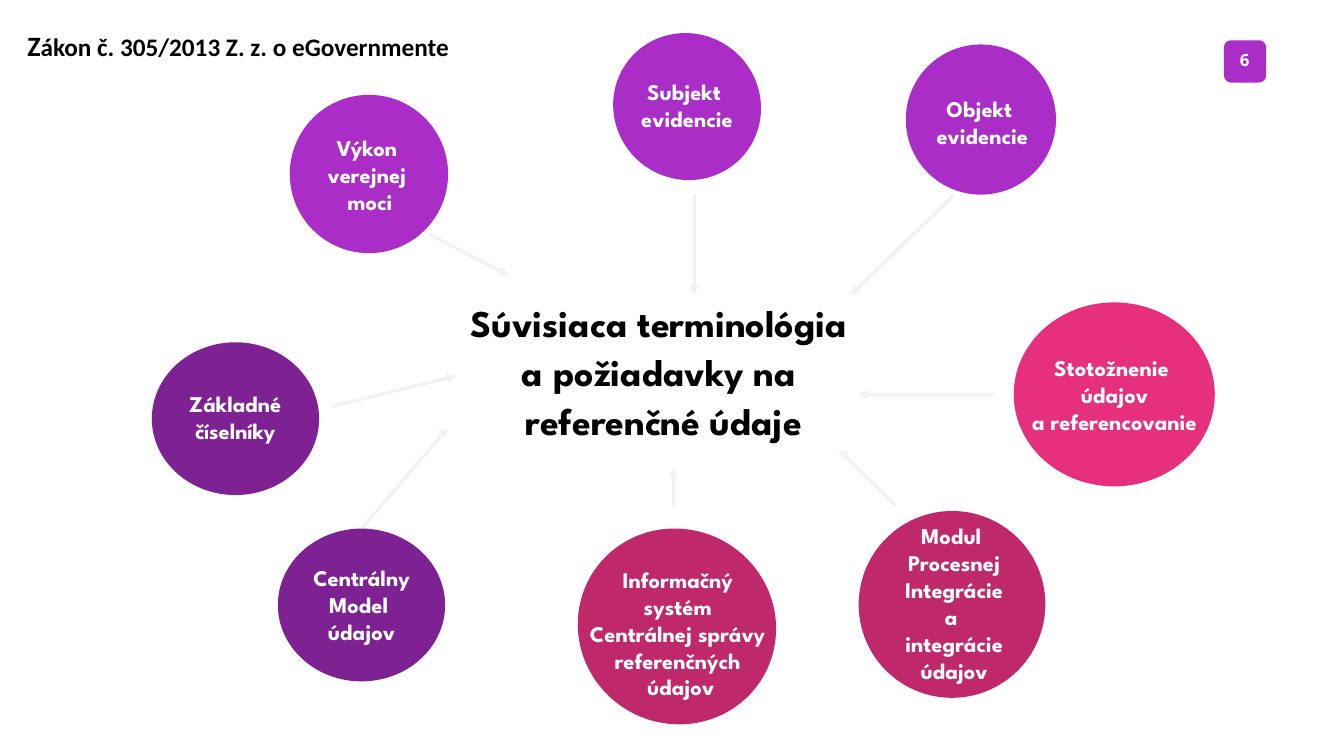
from pptx import Presentation
from pptx.dml.color import RGBColor
from pptx.enum.shapes import MSO_CONNECTOR, MSO_SHAPE
from pptx.enum.text import MSO_ANCHOR, MSO_AUTO_SIZE, PP_ALIGN
from pptx.oxml.ns import qn
from pptx.util import Cm, Pt
from lxml import etree

ELLIPSE, ROUNDED = MSO_SHAPE.OVAL, MSO_SHAPE.ROUNDED_RECTANGLE
STRAIGHT = MSO_CONNECTOR.STRAIGHT
TOP, MIDDLE = MSO_ANCHOR.TOP, MSO_ANCHOR.MIDDLE
LEFT, CENTER = PP_ALIGN.LEFT, PP_ALIGN.CENTER
NO_AUTOFIT = MSO_AUTO_SIZE.NONE

BLACK = RGBColor(0x00, 0x00, 0x00)
WHITE = RGBColor(0xFF, 0xFF, 0xFF)
PALE_GREY = RGBColor(0xF2, 0xF2, 0xF2)
VIOLET = RGBColor(0xAA, 0x2D, 0xC8)
PURPLE = RGBColor(0x7E, 0x21, 0x93)
PINK = RGBColor(0xE6, 0x2F, 0x7D)
CRIMSON = RGBColor(0xBF, 0x28, 0x6B)
DISPLAY_FONT = "League Spartan"

LAW_TITLE = [("Z", 40), ("ákon č. 305/2013 Z. z. o eGovernmente", 36)]
TOPIC = ["Súvisiaca terminológia ", "a požiadavky na ", "referenčné údaje"]
PAGE_NUMBER = ["6  "]

# lines, colour, circle (left, top, width, height), rotation, label (centre x, centre y, width)
TERMS = [
    (["Objekt ", "evidencie"], VIOLET, (45.64, 2.24, 7.57, 7.57), 0, (49.5, 6.15, 5.69)),
    (["Centrálny", "Model ", "údajov"], PURPLE, (14, 26.64, 8.43, 7.7), 0, (18.22, 30.45, 5.77)),
    (["Stotožnenie ", "údajov", "a referencovanie"], PINK,
     (51.08, 15.24, 10.13, 9.27), 0, (56.16, 19.89, 9.7)),
    (["Modul ", "Procesnej", "Integrácie", "a ", "integrácie", "údajov"], CRIMSON,
     (43.26, 25.76, 9.42, 9.4), 300.9, (48.08, 30.39, 5.94)),
    (["Subjekt ", "evidencie"], VIOLET, (30.86, 1.7, 7.52, 7.34), 218.6, (34.62, 5.28, 5.69)),
    (["Výkon ", "verejnej ", "moci"], VIOLET, (14.6, 4.78, 7.98, 7.98), 0, (18.64, 8.79, 5.13)),
    (["Informačný ", "systém ", "Centrálnej správy ", "referenčných ", "údajov"], CRIMSON,
     (29.21, 26.54, 9.8, 10.06), 300.9, (34.3, 31.91, 10.39)),
    (["Základné", "číselníky"], PURPLE, (7.65, 17.25, 8.43, 7.7), 0, (11.86, 21.01, 5.44)),
]

ARROWS = [
    (48.03, 9.86, 42.88, 14.86),
    (33.93, 25.48, 33.93, 23.57),
    (50.11, 19.89, 43.26, 19.89),
    (21.59, 11.79, 25.63, 13.87),
    (34.98, 9.8, 34.98, 14.86),
    (45.11, 25.48, 42.27, 22.66),
    (18.21, 26.64, 22.58, 21.56),
    (16.76, 20.47, 22.99, 18.95),
]


def add_filled(slide, preset, box, colour, rotation=0):
    shape = slide.shapes.add_shape(preset, *map(Cm, box))
    shape.shadow.inherit = False
    shape.fill.solid()
    shape.fill.fore_color.rgb = colour
    shape.line.fill.background()
    shape.rotation = rotation


def add_text(slide, box, lines, size, colour, font=DISPLAY_FONT, anchor=TOP, spacing=None):
    frame = slide.shapes.add_textbox(*map(Cm, box)).text_frame
    frame.word_wrap = False
    frame.vertical_anchor = anchor
    frame.text = "\n".join(lines)
    for paragraph in frame.paragraphs:
        paragraph.alignment = CENTER
        paragraph.line_spacing = spacing
        paragraph.font.name = font
        paragraph.font.size = Pt(size)
        paragraph.font.bold = True
        paragraph.font.color.rgb = colour


def add_arrow(slide, ends):
    arrow = slide.shapes.add_connector(STRAIGHT, *map(Cm, ends))
    arrow.line.color.rgb = PALE_GREY
    arrow.line.width = Pt(4.5)
    etree.SubElement(arrow.line._get_or_add_ln(), qn("a:tailEnd"), type="triangle")
    etree.SubElement(arrow._element.spPr, qn("a:effectLst"))


def add_term(slide, lines, colour, circle, rotation, label):
    add_filled(slide, ELLIPSE, circle, colour, rotation)
    x, y, width = label
    height = 0.25 + 1.37 * len(lines)
    box = (x - width / 2, y - height / 2, width, height)
    add_text(slide, box, lines, 32, WHITE, anchor=MIDDLE)


def set_title(title):
    title.left, title.top, title.width, title.height = map(Cm, (1.12, 1.32, 21.87, 3.5))
    frame = title.text_frame
    frame.auto_size = NO_AUTOFIT
    frame.vertical_anchor = TOP
    paragraph = frame.paragraphs[0]
    paragraph.alignment = LEFT
    paragraph.font.name = "Calibri"
    paragraph.font.bold = True
    paragraph.font.color.rgb = BLACK
    for text, size in LAW_TITLE:
        run = paragraph.add_run()
        run.text = text
        run.font.size = Pt(size)


def main():
    presentation = Presentation()
    presentation.slide_width, presentation.slide_height = Cm(67.72), Cm(38.1)
    slide = presentation.slides.add_slide(presentation.slide_layouts[5])
    set_title(slide.shapes.title)
    add_filled(slide, ROUNDED, (61.67, 2.03, 2.13, 2.13), VIOLET)
    add_text(slide, (61.6, 2.36, 2.67, 1.55), PAGE_NUMBER, 24, WHITE, font="Open Sans")
    add_text(slide, (22.45, 14.78, 22, 7.75), TOPIC, 54, BLACK, spacing=Pt(70))
    for ends in ARROWS:
        add_arrow(slide, ends)
    for term in TERMS:
        add_term(slide, *term)
    presentation.save("out.pptx")


if __name__ == "__main__":
    main()
